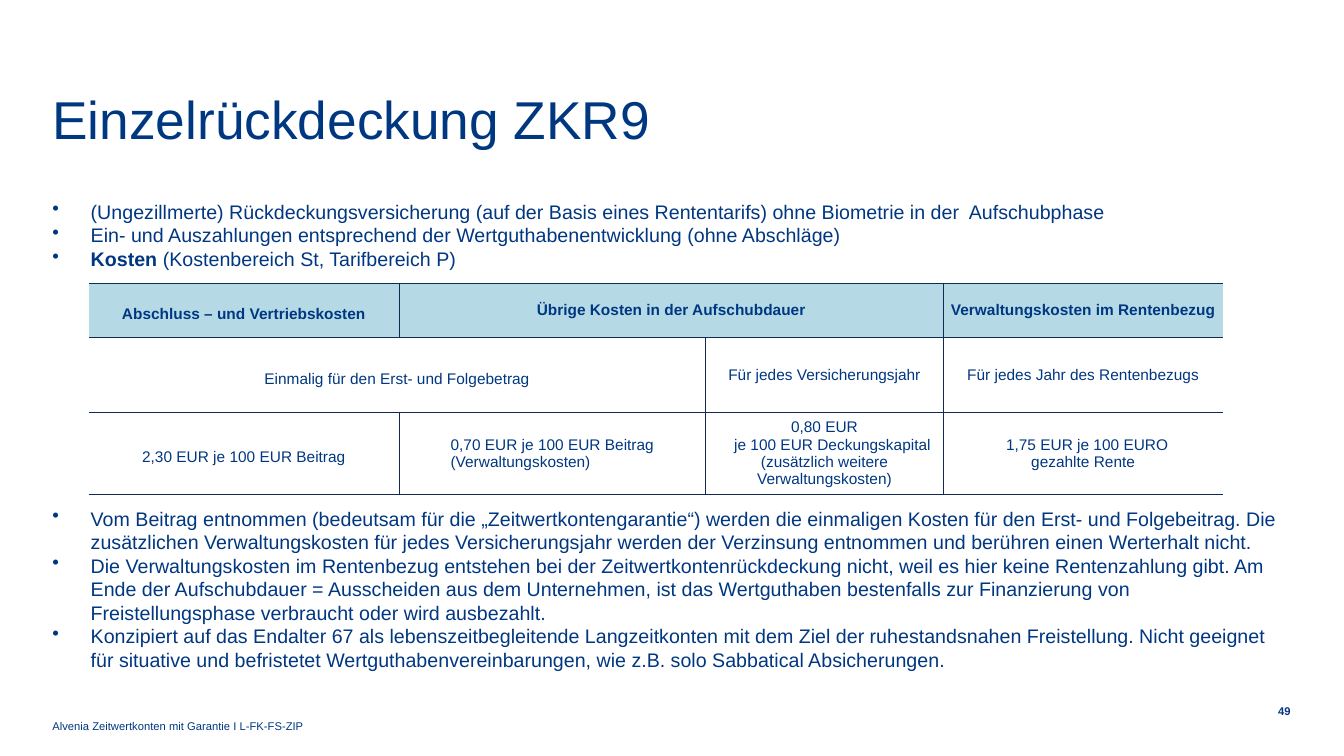
"""Build the cost overview slide for the ZKR9 single reinsurance tariff."""
from dataclasses import dataclass

from lxml import etree
from pptx import Presentation
from pptx.dml.color import RGBColor
from pptx.enum.text import MSO_ANCHOR, PP_ALIGN
from pptx.oxml.ns import qn
from pptx.util import Inches, Pt

NAVY = RGBColor(0x00, 0x37, 0x81)
RULE = RGBColor(0x12, 0x2B, 0x54)
AQUA = RGBColor(0xB5, 0xDA, 0xE6)
WHITE = RGBColor(0xFF, 0xFF, 0xFF)
LEFT, MID, RIGHT = PP_ALIGN.LEFT, PP_ALIGN.CENTER, PP_ALIGN.RIGHT
TOP, MIDDLE, BOTTOM = MSO_ANCHOR.TOP, MSO_ANCHOR.MIDDLE, MSO_ANCHOR.BOTTOM
FONT = "Arial"
WIDE, HIGH = Inches(13.33), Inches(7.5)
HANG, PAD = Inches(0.38), Inches(0.04)


@dataclass(frozen=True)
class Box:
    left: float
    top: float
    width: float
    height: float


@dataclass(frozen=True)
class Line:
    text: str
    strong: str = ""
    indent: float = 0


@dataclass(frozen=True)
class Label:
    box: Box
    lines: list[Line]
    size: int
    align: PP_ALIGN = LEFT
    anchor: MSO_ANCHOR = TOP
    space: Pt | float | None = None
    bold: bool = False
    bullet: bool = False


@dataclass(frozen=True)
class Entry:
    row: int
    col: int
    lines: list[Line]
    span: int = 1
    loose: bool = False
    align: PP_ALIGN = MID
    inset: float = 0.04


LABELS = [
    Label(Box(93.85, 92.93, 2.18, 2.13), [Line("49")], 8, RIGHT, MIDDLE, Pt(10), True),
    Label(Box(3.9, 12.8, 76.5, 13.6), [Line("Einzelrückdeckung ZKR9")], 38, space=Pt(38)),
    Label(Box(3.9, 26.4, 92.1, 10), [
        Line("(Ungezillmerte) Rückdeckungsversicherung (auf der Basis eines Rententarifs) "
             "ohne Biometrie in der  Aufschubphase"),
        Line("Ein- und Auszahlungen entsprechend der Wertguthabenentwicklung (ohne Abschläge)"),
        Line(" (Kostenbereich St, Tarifbereich P)", "Kosten"),
    ], 14, bullet=True),
    Label(Box(3.9, 67, 92.1, 23), [
        Line("Vom Beitrag entnommen (bedeutsam für die „Zeitwertkontengarantie“) werden die "
             "einmaligen Kosten für den Erst- und Folgebeitrag. Die zusätzlichen "
             "Verwaltungskosten für jedes Versicherungsjahr werden der Verzinsung entnommen "
             "und berühren einen Werterhalt nicht."),
        Line("Die Verwaltungskosten im Rentenbezug entstehen bei der Zeitwertkontenrückdeckung "
             "nicht, weil es hier keine Rentenzahlung gibt. Am Ende der Aufschubdauer = "
             "Ausscheiden aus dem Unternehmen, ist das Wertguthaben bestenfalls zur "
             "Finanzierung von Freistellungsphase verbraucht oder wird ausbezahlt."),
        Line("Konzipiert auf das Endalter 67 als lebenszeitbegleitende Langzeitkonten mit dem "
             "Ziel der ruhestandsnahen Freistellung. Nicht geeignet für situative und "
             "befristetet Wertguthabenvereinbarungen, wie z.B. solo Sabbatical Absicherungen."),
    ], 14, bullet=True),
    Label(Box(3.9, 91.87, 76.5, 5.07), [Line("Alvenia Zeitwertkonten mit Garantie I L-FK-FS-ZIP")],
          8, anchor=BOTTOM, space=0.9),
]

GRID = Box(6.6, 37.47, 84.4, 26.93)
COLS = [23.1, 22.8, 17.7, 20.8]
ROWS = [7.2, 9.87, 9.87]
CELLS = [
    Entry(0, 0, [Line("Abschluss – und Vertriebskosten")], loose=True, inset=0),
    Entry(0, 1, [Line("Übrige Kosten in der Aufschubdauer")], span=2),
    Entry(0, 3, [Line("Verwaltungskosten im Rentenbezug")]),
    Entry(1, 0, [Line("Einmalig für den Erst- und Folgebetrag")], span=2, loose=True, inset=0),
    Entry(1, 2, [Line("Für jedes Versicherungsjahr")]),
    Entry(1, 3, [Line("Für jedes Jahr des Rentenbezugs")]),
    Entry(2, 0, [Line("2,30 EUR je 100 EUR Beitrag")], loose=True, inset=0),
    Entry(2, 1, [Line("0,70 EUR je 100 EUR Beitrag (Verwaltungskosten)")], align=LEFT, inset=0.51),
    Entry(2, 2, [Line("0,80 EUR"), Line("je 100 EUR Deckungskapital", indent=0.16),
                 Line("(zusätzlich weitere Verwaltungskosten)")]),
    Entry(2, 3, [Line("1,75 EUR je 100 EURO", indent=0.08), Line("gezahlte Rente")]),
]


def across(share: float) -> int:
    return round(WIDE * share / 100)


def down(share: float) -> int:
    return round(HIGH * share / 100)


def place(box: Box) -> tuple[int, int, int, int]:
    return across(box.left), down(box.top), across(box.width), down(box.height)


def write(frame, lines: list[Line], size: int, align: PP_ALIGN,
          space: Pt | float | None, bold: bool, bullet: bool = False) -> None:
    for n, line in enumerate(lines):
        para = frame.add_paragraph() if n else frame.paragraphs[0]
        para.alignment = align
        if space is not None:
            para.line_spacing = space
        props = para._p.get_or_add_pPr()
        if bullet:
            props.set("marL", str(HANG))
            props.set("indent", str(-HANG))
            etree.SubElement(props, qn("a:buChar")).set("char", "•")
        elif line.indent:
            props.set("marL", str(Inches(line.indent)))
        font = para.font
        font.name, font.size, font.bold = FONT, Pt(size), bold
        font.color.rgb = NAVY
        if line.strong:
            run = para.add_run()
            run.text, run.font.bold = line.strong, True
        para.add_run().text = line.text


def add_label(slide, label: Label) -> None:
    frame = slide.shapes.add_textbox(*place(label.box)).text_frame
    frame.word_wrap = True
    frame.vertical_anchor = label.anchor
    frame.margin_left = frame.margin_right = frame.margin_top = frame.margin_bottom = 0
    write(frame, label.lines, label.size, label.align, label.space, label.bold, label.bullet)


def edge(cell, sides: str) -> None:
    props = cell._tc.get_or_add_tcPr()
    for n, side in enumerate("LRTB"):
        line = etree.Element(qn(f"a:ln{side}"), w=str(Pt(0.5)))
        if side in sides:
            fill = etree.SubElement(line, qn("a:solidFill"))
            etree.SubElement(fill, qn("a:srgbClr")).set("val", str(RULE))
        else:
            etree.SubElement(line, qn("a:noFill"))
        props.insert(n, line)


def add_entry(table, entry: Entry) -> None:
    last = entry.col + entry.span - 1
    cell = table.cell(entry.row, entry.col)
    if entry.span > 1:
        cell.merge(table.cell(entry.row, last))
    for col in range(entry.col, last + 1):
        part = table.cell(entry.row, col)
        part.fill.solid()
        part.fill.fore_color.rgb = WHITE if entry.row else AQUA
        start = "L" if col == entry.col > 0 else ""
        end = "R" if last < len(COLS) - 1 else ""
        edge(part, "TB" + start + end)
    cell.vertical_anchor = MIDDLE
    cell.margin_left = Inches(entry.inset)
    cell.margin_right = min(PAD, Inches(entry.inset))
    cell.margin_top = cell.margin_bottom = PAD
    write(cell.text_frame, entry.lines, 11, entry.align,
          Pt(18) if entry.loose else None, entry.row == 0)


def add_costs(slide) -> None:
    table = slide.shapes.add_table(len(ROWS), len(COLS), *place(GRID)).table
    table.first_row = table.horz_banding = False
    for col, share in zip(table.columns, COLS):
        col.width = across(share)
    for row, share in zip(table.rows, ROWS):
        row.height = down(share)
    for entry in CELLS:
        add_entry(table, entry)


def main() -> None:
    deck = Presentation()
    deck.slide_width, deck.slide_height = WIDE, HIGH
    slide = deck.slides.add_slide(deck.slide_layouts[6])
    for label in LABELS:
        add_label(slide, label)
    add_costs(slide)
    deck.save("out.pptx")


if __name__ == "__main__":
    main()
